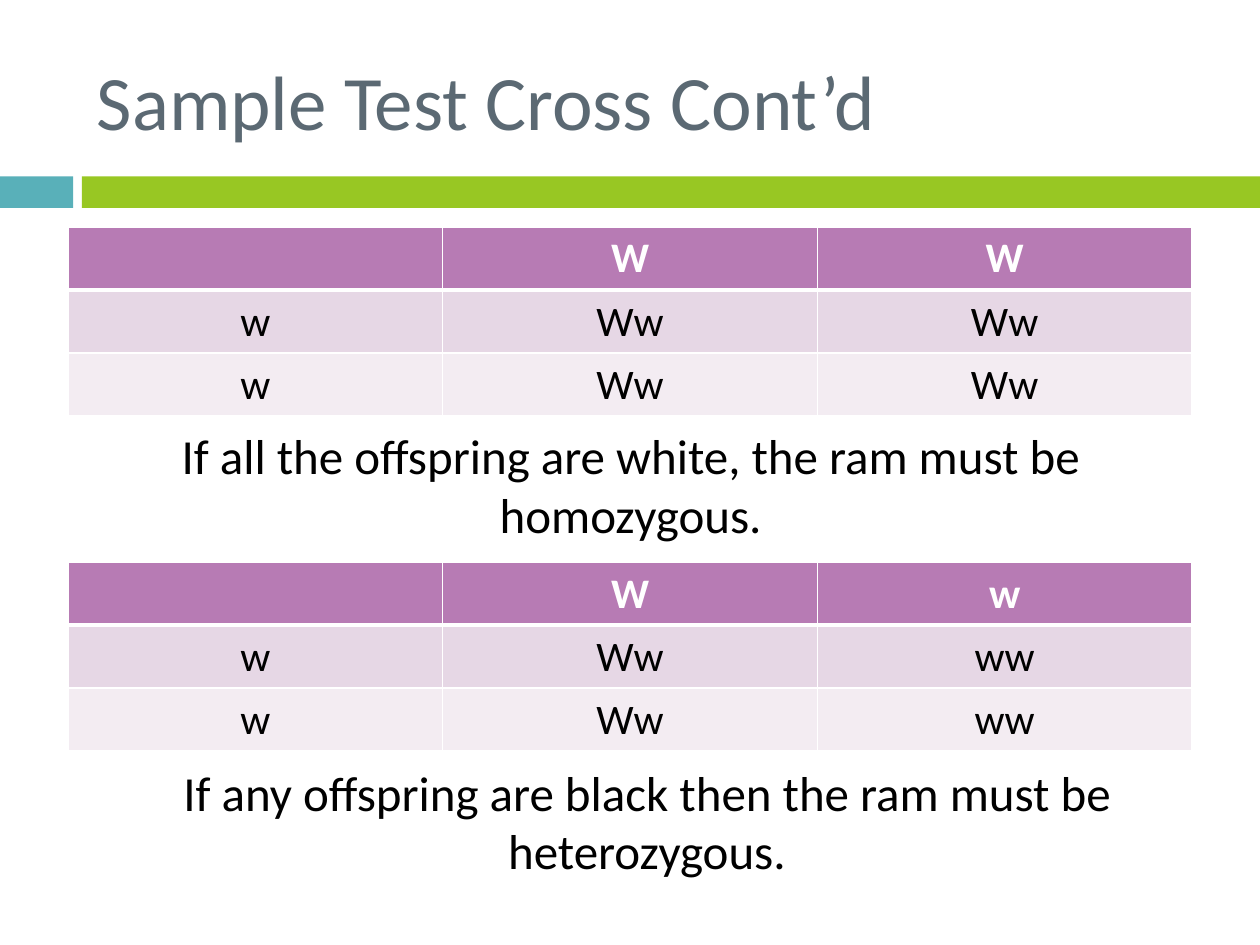
from lxml.etree import SubElement
from pptx import Presentation
from pptx.dml.color import RGBColor
from pptx.enum.shapes import MSO_SHAPE
from pptx.enum.text import MSO_ANCHOR, PP_ALIGN
from pptx.oxml.ns import qn
from pptx.util import Inches, Pt

WHITE = RGBColor(0xFF, 0xFF, 0xFF)
BLACK = RGBColor(0x00, 0x00, 0x00)
SLATE = RGBColor(0x5B, 0x69, 0x73)
TEAL = RGBColor(0x59, 0xB0, 0xB9)
GREEN = RGBColor(0x98, 0xC7, 0x23)
PURPLE = RGBColor(0xB7, 0x7B, 0xB4)
LILAC = RGBColor(0xE6, 0xD7, 0xE5)
PALE = RGBColor(0xF3, 0xEC, 0xF2)


class TestCrossSlide:
    """Draws styled elements on one slide, placed on a grid of 100 columns by 75 rows."""

    font_name = "Calibri"
    row_fills = (PURPLE, LILAC, PALE)

    def __init__(self, deck):
        self.page = deck.slides.add_slide(deck.slide_layouts[6])
        self.column = deck.slide_width / 100
        self.row = deck.slide_height / 75

    def place(self, left, top, width, height):
        return (round(left * self.column), round(top * self.row),
                round(width * self.column), round(height * self.row))

    def style(self, para, size, color, align=PP_ALIGN.CENTER, bold=False):
        para.alignment = align
        para.font.name = self.font_name
        para.font.size = Pt(size)
        para.font.color.rgb = color
        para.font.bold = bold

    def bar(self, area, color):
        bar = self.page.shapes.add_shape(MSO_SHAPE.RECTANGLE, *self.place(*area))
        bar.shadow.inherit = False
        bar.fill.solid()
        bar.fill.fore_color.rgb = color
        bar.line.fill.background()

    def text(self, area, words, size, color, align=PP_ALIGN.CENTER, anchor=MSO_ANCHOR.TOP):
        frame = self.page.shapes.add_textbox(*self.place(*area)).text_frame
        frame.word_wrap = True
        frame.vertical_anchor = anchor
        frame.text = words
        self.style(frame.paragraphs[0], size, color, align)

    def borders(self, cell, bottom, top):
        properties = cell._tc.get_or_add_tcPr()
        for side, width in (("L", 1), ("R", 1), ("T", top), ("B", bottom)):
            line = SubElement(properties, qn(f"a:ln{side}"), w=str(Pt(width)))
            fill = SubElement(line, qn("a:solidFill"))
            SubElement(fill, qn("a:srgbClr"), val=str(WHITE))

    def punnett(self, area, ram, ewe):
        rows = [["", *ram]] + [[allele] + ["".join(sorted(gene + allele)) for gene in ram]
                               for allele in ewe]
        table = self.page.shapes.add_table(len(rows), len(rows[0]), *self.place(*area)).table
        for r, (values, fill) in enumerate(zip(rows, self.row_fills)):
            header = r == 0
            for c, value in enumerate(values):
                cell = table.cell(r, c)
                self.borders(cell, bottom=3 if header else 1, top=3 if r == 1 else 1)
                cell.fill.solid()
                cell.fill.fore_color.rgb = fill
                cell.text = value
                self.style(cell.text_frame.paragraphs[0], 24,
                           WHITE if header else BLACK, bold=header)


def main():
    deck = Presentation()
    deck.slide_width, deck.slide_height = Inches(10), Inches(7.5)
    slide = TestCrossSlide(deck)
    slide.bar((0, 14, 5.8, 2.5), TEAL)
    slide.bar((6.5, 14, 93.5, 2.5), GREEN)
    slide.text((6.7, 2.5, 89.2, 10.8), "Sample Test Cross Cont’d", 44, SLATE,
               PP_ALIGN.LEFT, MSO_ANCHOR.MIDDLE)
    slide.punnett((5.4, 18, 89.2, 15), ram="WW", ewe="ww")
    slide.text((9.2, 33.3, 81.7, 10.4),
               "If all the offspring are white, the ram must be homozygous.", 28, BLACK)
    slide.punnett((5.4, 44.6, 89.2, 15), ram="Ww", ewe="ww")
    slide.text((10.5, 60, 81.7, 10.4),
               "If any offspring are black then the ram must be heterozygous.", 28, BLACK)
    deck.save("out.pptx")


if __name__ == "__main__":
    main()
